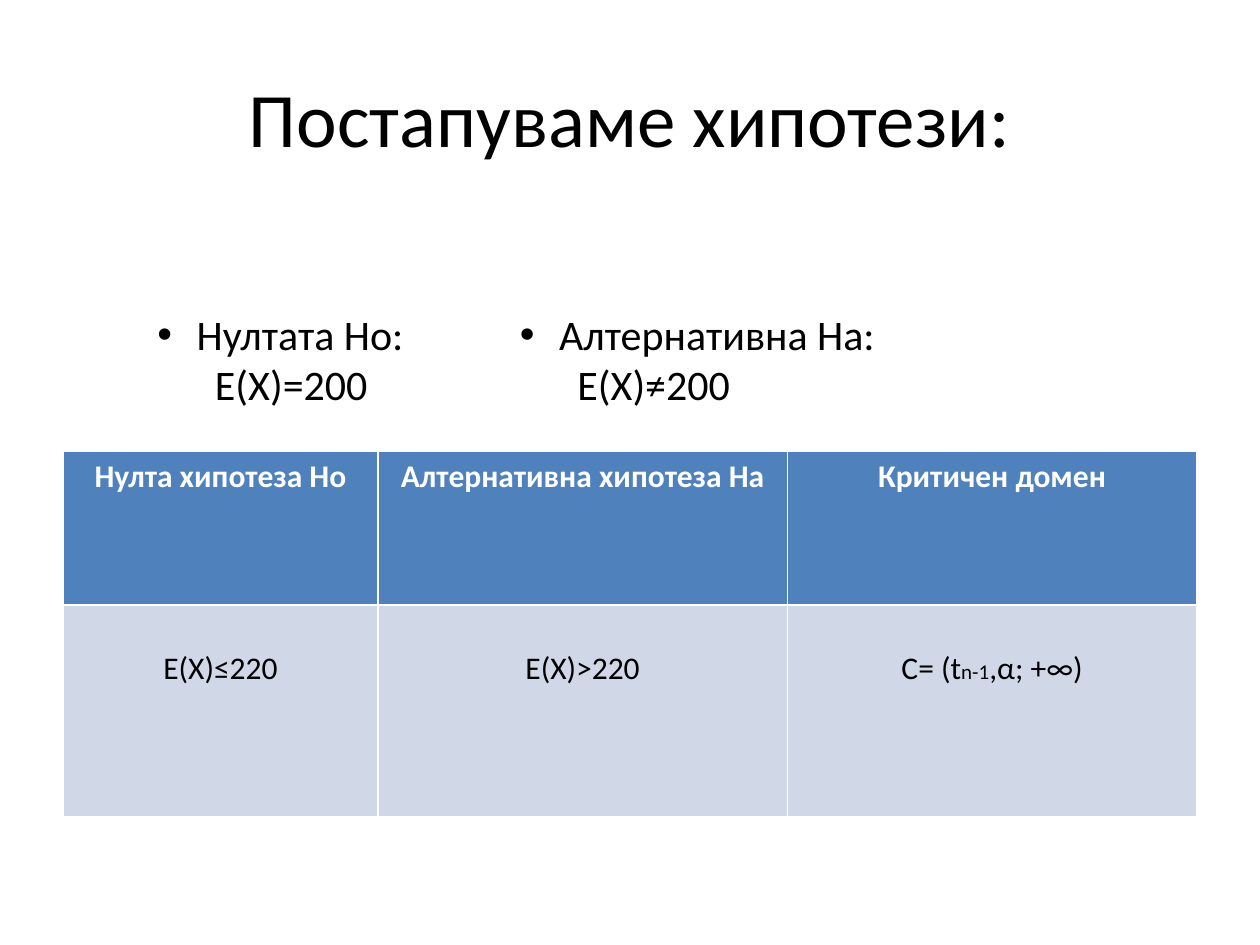
import dataclasses
import pptx
import pptx.util
import pptx.dml.color
import pptx.enum.text

Cm, Pt = pptx.util.Cm, pptx.util.Pt
Align = pptx.enum.text.PP_ALIGN


@dataclasses.dataclass(frozen=True)
class Theme:
    font: str = "Calibri"
    ink: str = "000000"
    light: str = "FFFFFF"
    head: str = "4F81BD"
    band: str = "D0D8E8"
    title: int = 44
    body: int = 24
    cell: int = 18
    small: int = 12


theme = Theme()


def add_run(para, text, size, color=theme.ink, bold=False):
    run = para.add_run()
    run.text = text
    run.font.name = theme.font
    run.font.size = Pt(size)
    run.font.bold = bold
    run.font.color.rgb = pptx.dml.color.RGBColor.from_string(color)


def place(shape, left, top, width, height):
    shape.left, shape.top = Cm(left), Cm(top)
    shape.width, shape.height = Cm(width), Cm(height)


deck = pptx.Presentation()
deck.slide_width, deck.slide_height = Cm(25.4), Cm(19.05)
slide = deck.slides.add_slide(deck.slide_layouts[1])

# Title
title = slide.shapes.title
place(title, 1.27, 0.76, 22.86, 3.18)
para = title.text_frame.paragraphs[0]
para.alignment = Align.CENTER
add_run(para, "Постапуваме хипотези:", theme.title)

# Hypotheses: the body flows through columns, two lines in each
body = slide.placeholders[1]
place(body, 2.92, 5.08, 22.43, 3.33)
frame = body.text_frame
frame.word_wrap = True
frame.auto_size = pptx.enum.text.MSO_AUTO_SIZE.NONE
frame.margin_top, frame.margin_bottom = Cm(1.14), 0
props = frame._txBody.bodyPr
props.set("numCol", "3")
props.set("spcCol", "0")

pairs = [("Нултата Но:", "Е(Х)=200"), ("Алтернативна На:", "Е(Х)≠200")]
lines = [(text, mark) for pair in pairs for text, mark in zip(pair, ("•", None))]
for i, (text, mark) in enumerate(lines):
    para = frame.add_paragraph() if i else frame.paragraphs[0]
    para.space_before = Pt(0)
    add_run(para, text, theme.body)
    form = para._p.get_or_add_pPr()
    form.set("marL", str(Cm(0.79 if mark else 1.16)))
    form.set("indent", str(Cm(-0.79 if mark else 0)))
    tag = "a:buChar" if mark else "a:buNone"
    bullet = pptx.oxml.xmlchemy.OxmlElement(tag)
    if mark:
        bullet.set("char", mark)
    form.append(bullet)

# Table: each cell is a list of (text, size) runs
big, small = theme.cell, theme.small
rows = [
    [[("Нулта хипотеза Но", big)], [("Алтернативна хипотеза На", big)],
     [("Критичен домен", big)]],
    [[("Е(Х)≤220", big)], [("Е(Х)>220", big)],
     [("C= (t", big), ("n-1", small), (",α; +∞)", big)]],
]
looks = [(theme.head, theme.light, True, 0.13), (theme.band, theme.ink, False, 0.9)]

grid = slide.shapes.add_table(2, 3, Cm(1.27), Cm(9.1), Cm(22.86), Cm(7.37)).table
for col, width in zip(grid.columns, (6.35, 8.25, 8.26)):
    col.width = Cm(width)
for row, height in zip(grid.rows, (3.1, 4.27)):
    row.height = Cm(height)

for r, (row, (fill, color, bold, top)) in enumerate(zip(rows, looks)):
    for c, runs in enumerate(row):
        cell = grid.cell(r, c)
        cell.fill.solid()
        cell.fill.fore_color.rgb = pptx.dml.color.RGBColor.from_string(fill)
        cell.margin_top = Cm(top)
        para = cell.text_frame.paragraphs[0]
        para.alignment = Align.CENTER
        for text, size in runs:
            add_run(para, text, size, color, bold)

deck.save("out.pptx")
